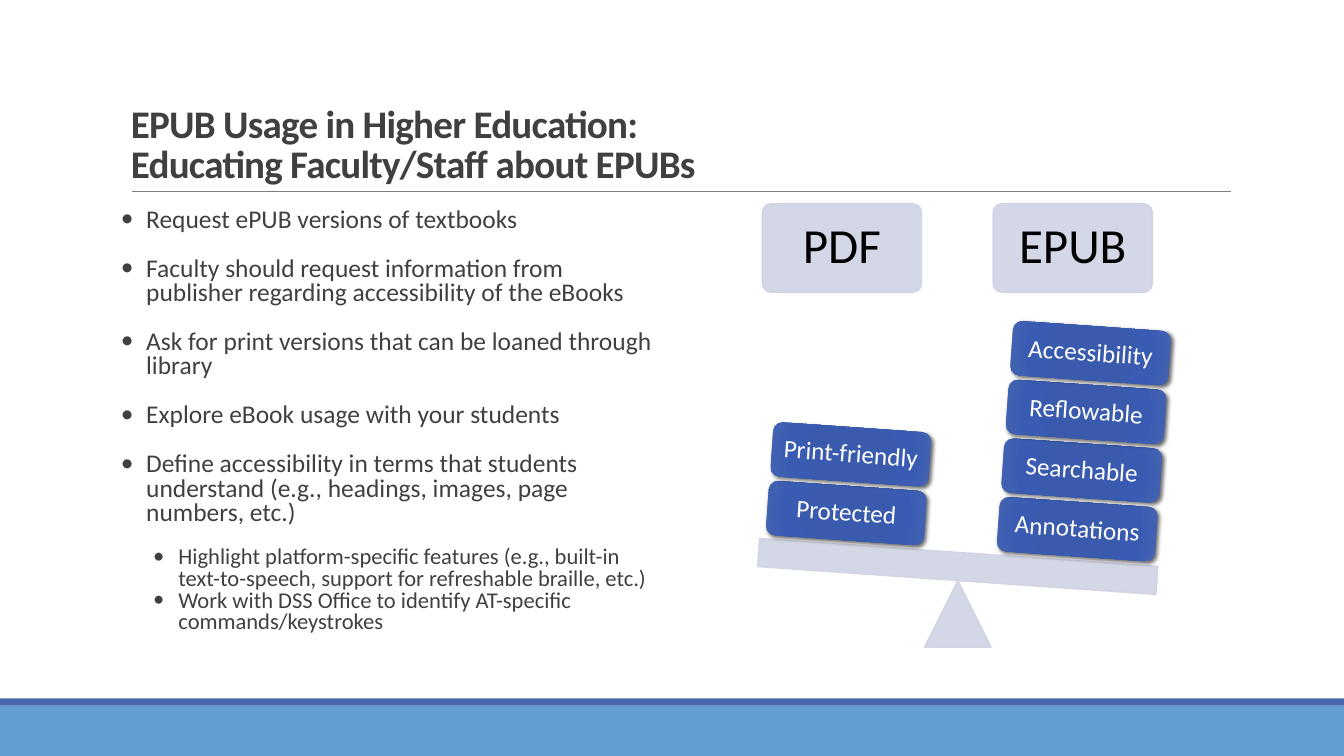
from dataclasses import dataclass

from lxml import etree
from pptx import Presentation
from pptx.dml.color import RGBColor
from pptx.enum.shapes import MSO_CONNECTOR, MSO_SHAPE
from pptx.enum.text import MSO_ANCHOR, PP_ALIGN
from pptx.oxml import parse_xml
from pptx.oxml.ns import nsdecls, qn
from pptx.util import Inches, Pt


@dataclass(frozen=True)
class Theme:
    font: str = "Calibri"
    ink: str = "404040"
    rule: str = "808080"
    band: str = "629DD1"
    stripe: str = "4A66AC"
    pale: str = "D0D3E3"
    black: str = "000000"
    white: str = "FFFFFF"
    tile_stops: tuple = ((0, "3759AE"), (34, "3A5BAD"), (70, "395BB2"), (100, "4564B1"))
    title_size: float = 27.9
    bullet_size: float = 18.2
    sub_bullet_size: float = 16.1
    heading_size: float = 35
    tile_size: float = 18


theme = Theme()
presentation = Presentation()
presentation.slide_width = Inches(13.33)
presentation.slide_height = Inches(7.5)
slide = presentation.slides.add_slide(presentation.slide_layouts[6])


def style(paragraph, size, color, spacing, bold=False):
    paragraph.line_spacing = spacing
    for run in paragraph.runs:
        run.font.name = theme.font
        run.font.size = Pt(size)
        run.font.bold = bold
        run.font.color.rgb = RGBColor.from_string(color)


def add_block(kind, left, top, width, height, fill=None, text="", size=0, color=theme.black):
    """Add an unoutlined, shadowless shape with optional solid fill and centred text."""
    block = slide.shapes.add_shape(kind, Inches(left), Inches(top), Inches(width), Inches(height))
    block.shadow.inherit = False
    block.line.fill.background()
    if fill:
        block.fill.solid()
        block.fill.fore_color.rgb = RGBColor.from_string(fill)
    if text:
        frame = block.text_frame
        frame.margin_left = frame.margin_right = Inches(0.07)
        frame.margin_top = frame.margin_bottom = Inches(0.07)
        frame.vertical_anchor = MSO_ANCHOR.MIDDLE
        frame.text = text
        frame.paragraphs[0].alignment = PP_ALIGN.CENTER
        style(frame.paragraphs[0], size, color, 0.9)
    return block


# Footer bands and title rule
add_block(MSO_SHAPE.RECTANGLE, 0, 7, 13.33, 0.5, theme.band)
add_block(MSO_SHAPE.RECTANGLE, 0, 6.93, 13.33, 0.07, theme.stripe)
title_rule = slide.shapes.add_connector(
    MSO_CONNECTOR.STRAIGHT, Inches(1.31), Inches(1.9), Inches(12.21), Inches(1.9))
title_rule.line.color.rgb = RGBColor.from_string(theme.rule)
title_rule.line.width = Pt(0.5)
etree.SubElement(title_rule._element.spPr, qn("a:effectLst"))

# Title
title = slide.shapes.add_textbox(Inches(1.2), Inches(0.31), Inches(11), Inches(1.59)).text_frame
title.word_wrap = True
title.vertical_anchor = MSO_ANCHOR.BOTTOM
title.paragraphs[0].text = "EPUB Usage in Higher Education:\nEducating Faculty/Staff about EPUBs"
style(title.paragraphs[0], theme.title_size, theme.ink, 0.85, bold=True)
for run in title.paragraphs[0].runs:
    run.font._element.set("spc", "-50")

# Recommendations: text, level, space before in points
recommendations = [
    ("Request ePUB versions of textbooks", 0, 0),
    ("Faculty should request information from publisher regarding accessibility of the eBooks", 0, 17.5),
    ("Ask for print versions that can be loaned through library", 0, 17.5),
    ("Explore eBook usage with your students", 0, 17.5),
    ("Define accessibility in terms that students understand "
     "(e.g., headings, images, page numbers, etc.)", 0, 17.5),
    ("Highlight platform-specific features (e.g., built-in text-to-speech, "
     "support for refreshable braille, etc.)", 1, 15),
    ("Work with DSS Office to identify AT-specific commands/keystrokes", 1, 0),
]
body = slide.shapes.add_textbox(Inches(1.2), Inches(2.02), Inches(5.4), Inches(4.4)).text_frame
body.word_wrap = True
body.margin_left = body.margin_right = 0
for index, (text, level, gap) in enumerate(recommendations):
    paragraph = body.add_paragraph() if index else body.paragraphs[0]
    paragraph.text = text
    paragraph.level = level
    paragraph.space_before = Pt(gap)
    style(paragraph, theme.sub_bullet_size if level else theme.bullet_size, theme.ink, 0.8)
    properties = paragraph._p.get_or_add_pPr()
    properties.set("marL", str(Inches(0.57 if level else 0.25)))
    properties.set("indent", str(Inches(-0.25)))
    bullet_color = etree.SubElement(properties, qn("a:buClr"))
    etree.SubElement(bullet_color, qn("a:srgbClr"), val=theme.ink)
    etree.SubElement(properties, qn("a:buFont"), typeface=theme.font)
    etree.SubElement(properties, qn("a:buChar"), char="•")

# Scale: headings, fulcrum and beam
scale_parts = []
for left, text in ((7.56, "PDF"), (9.85, "EPUB")):
    heading = add_block(MSO_SHAPE.ROUNDED_RECTANGLE, left, 2.02, 1.58, 0.88,
                        theme.pale, text, theme.heading_size)
    heading.adjustments[0] = 0.1
    scale_parts.append(heading)
scale_parts.append(add_block(MSO_SHAPE.ISOSCELES_TRIANGLE, 9.17, 5.76, 0.66, 0.66, theme.pale))
beam = add_block(MSO_SHAPE.RECTANGLE, 7.52, 5.48, 3.96, 0.28, theme.pale)
beam.rotation = 4
scale_parts.append(beam)
for part in scale_parts:
    part.line.color.rgb = RGBColor.from_string(theme.pale)
    part.line.width = Pt(1)
    for color in part._element.spPr.iter(qn("a:srgbClr")):
        etree.SubElement(color, qn("a:alpha"), val="90000")

# Weights, stacked upwards from the tilted beam
stops = "".join(f'<a:gs pos="{position * 1000}"><a:srgbClr val="{color}"/></a:gs>'
                for position, color in theme.tile_stops)
tile_gradient = (
    f'<a:gradFill {nsdecls("a")} rotWithShape="1"><a:gsLst>{stops}</a:gsLst><a:path path="circle">'
    '<a:fillToRect l="100000" t="100000" r="100000" b="100000"/></a:path></a:gradFill>')
tile_shadow = (
    f'<a:outerShdw {nsdecls("a")} blurRad="{Pt(3)}" dist="{Pt(2)}" dir="2700000" rotWithShape="0">'
    f'<a:srgbClr val="{theme.black}"><a:alpha val="60000"/></a:srgbClr></a:outerShdw>')
stacks = [
    (9.9, 4.98, ["Annotations", "Searchable", "Reflowable", "Accessibility"]),
    (7.61, 4.82, ["Protected", "Print-friendly"]),
]
for left, bottom_top, weights in stacks:
    for step, text in enumerate(weights):
        tile = add_block(MSO_SHAPE.ROUNDED_RECTANGLE, left + 0.044 * step, bottom_top - 0.582 * step,
                         1.57, 0.54, text=text, size=theme.tile_size, color=theme.white)
        tile.rotation = 4
        properties = tile._element.spPr
        properties.insert(2, parse_xml(tile_gradient))
        properties.find(qn("a:effectLst")).append(parse_xml(tile_shadow))

presentation.save("out.pptx")
